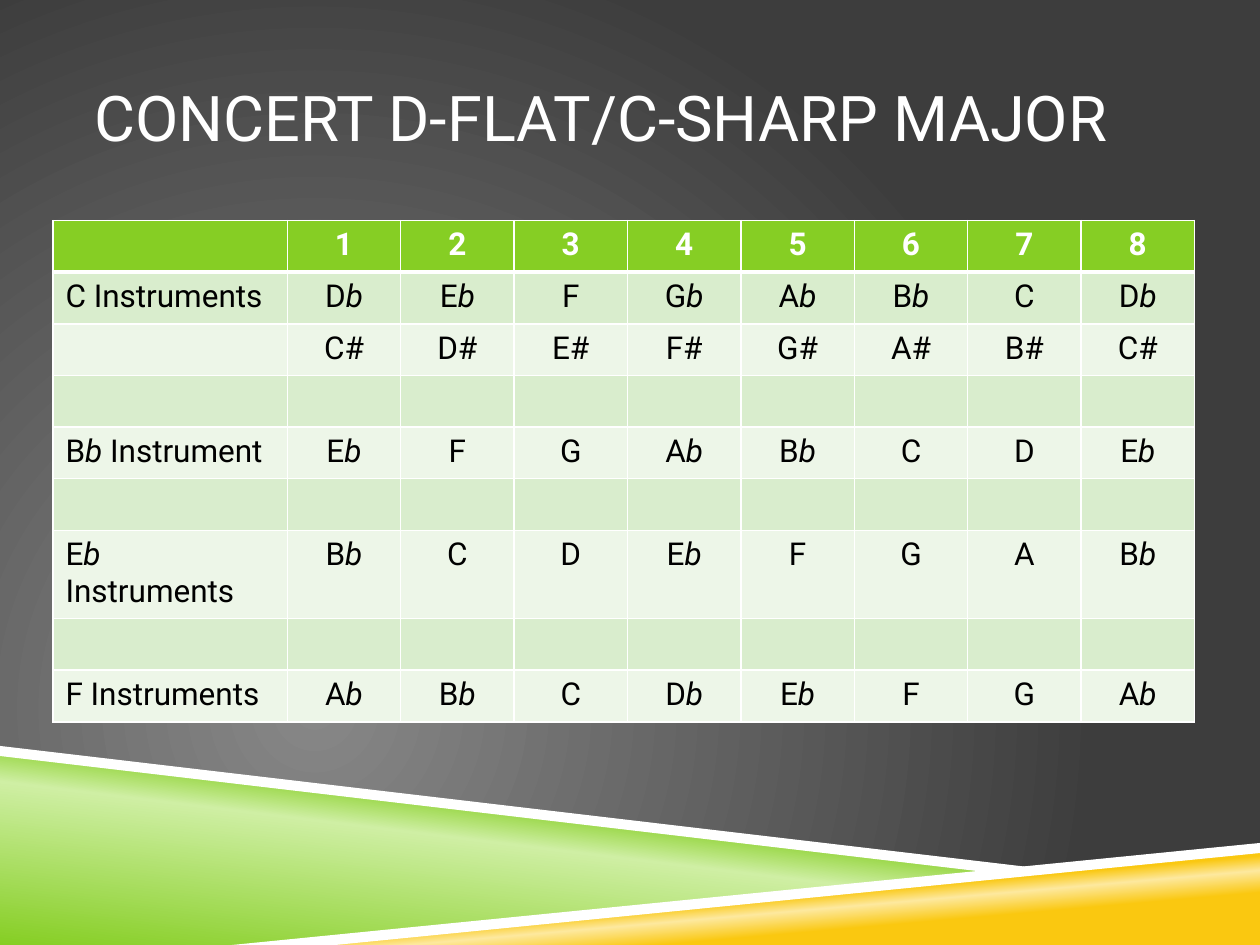
from lxml import etree
from pptx import Presentation
from pptx.dml.color import RGBColor
from pptx.enum.text import MSO_ANCHOR, PP_ALIGN
from pptx.oxml import parse_xml
from pptx.oxml.ns import nsdecls, qn
from pptx.util import Inches, Pt

COLORS = {
    "white": "FFFFFF", "black": "000000",
    "green": "86CE24", "light_green": "CFEFA4",
    "gold": "FAC810", "light_gold": "FDE99F",
    "gray": "878787", "dark_gray": "3D3D3D",
    "band": "D9EDCD", "pale_band": "EDF6E8",
}
FONT = "Roboto"
HEADER = ["", *"12345678"]
SCALES = [
    ("C Instruments", "Db Eb F Gb Ab Bb C Db"),
    ("", "C# D# E# F# G# A# B# C#"),
    ("", ""),
    ("Bb Instrument", "Eb F G Ab Bb C D Eb"),
    ("", ""),
    ("Eb Instruments", "Bb C D Eb F G A Bb"),
    ("", ""),
    ("F Instruments", "Ab Bb C Db Eb F G Ab"),
]


def rgb(name):
    return RGBColor.from_string(COLORS[name])


def linear(angle):
    return f'<a:lin ang="{angle * 60000}" scaled="0"/>'


class SlideBuilder:
    def __init__(self, slide):
        self.s = slide

    def gradient(self, fill, parent, stops, direction):
        """Fill parent with (percent, color) stops; direction is the a:lin or a:path XML."""
        fill.solid()
        stop_xml = "".join(
            f'<a:gs pos="{pos * 1000}"><a:srgbClr val="{COLORS[name]}"/></a:gs>'
            for pos, name in stops)
        grad = parse_xml(f'<a:gradFill {nsdecls("a")} rotWithShape="1">'
                         f'<a:gsLst>{stop_xml}</a:gsLst>{direction}</a:gradFill>')
        parent.replace(parent.find(qn("a:solidFill")), grad)

    def background(self, stops):
        fill = self.s.background.fill
        fill.solid()
        glow = ('<a:path path="circle">'
                '<a:fillToRect l="50000" t="100000" r="100000" b="50000"/></a:path>')
        self.gradient(fill, self.s._element.xpath(".//p:bgPr")[0], stops, glow)

    def polygon(self, points, color=None, stops=None, angle=0):
        points = [(Inches(x), Inches(y)) for x, y in points]
        builder = self.s.shapes.build_freeform(*points[0])
        builder.add_line_segments(points[1:], close=True)
        sp = builder.convert_to_shape()
        sp.shadow.inherit = False
        sp.line.fill.background()
        if stops:
            self.gradient(sp.fill, sp._element.spPr, stops, linear(angle))
        else:
            sp.fill.solid()
            sp.fill.fore_color.rgb = rgb(color)

    def run(self, p, text, size, color, bold=False, italic=False):
        r = p.add_run()
        r.text = text
        r.font.name, r.font.size = FONT, Pt(size)
        r.font.bold, r.font.italic = bold, italic
        r.font.color.rgb = rgb(color)

    def title(self, text, left, top, width, height):
        box = self.s.shapes.add_textbox(*map(Inches, (left, top, width, height)))
        tf = box.text_frame
        tf.word_wrap = True
        tf.vertical_anchor = MSO_ANCHOR.MIDDLE
        tf.margin_left = tf.margin_right = 0
        self.run(tf.paragraphs[0], text, 36, "white")

    def borders(self, cell, top, bottom):
        tc_pr = cell._tc.get_or_add_tcPr()
        for side, width in (("L", 1), ("R", 1), ("T", top), ("B", bottom)):
            ln = etree.SubElement(tc_pr, qn(f"a:ln{side}"), w=str(Pt(width)))
            fill = etree.SubElement(ln, qn("a:solidFill"))
            etree.SubElement(fill, qn("a:srgbClr"), val=COLORS["white"])

    def note(self, p, text, color, bold):
        """Write text with its flat sign, if any, in italics."""
        for part in text.partition("b"):
            if part:
                self.run(p, part, 18, color, bold, italic=part == "b")

    def table(self, rows, left, top, col_widths, row_height):
        frame = self.s.shapes.add_table(
            len(rows), len(col_widths), Inches(left), Inches(top),
            Inches(sum(col_widths)), Inches(row_height * len(rows)))
        table = frame.table
        for col, width in zip(table.columns, col_widths):
            col.width = Inches(width)
        for i, values in enumerate(rows):
            table.rows[i].height = Inches(row_height)
            header = i == 0
            fill = "green" if header else "band" if i % 2 else "pale_band"
            for j, text in enumerate(values):
                cell = table.cell(i, j)
                self.borders(cell, top=3 if i == 1 else 1, bottom=3 if header else 1)
                cell.fill.solid()
                cell.fill.fore_color.rgb = rgb(fill)
                p = cell.text_frame.paragraphs[0]
                if j:
                    p.alignment = PP_ALIGN.CENTER
                self.note(p, text, "white" if header else "black", bold=header)


def main():
    prs = Presentation()
    prs.slide_width, prs.slide_height = Inches(10), Inches(7.5)
    b = SlideBuilder(prs.slides.add_slide(prs.slide_layouts[6]))

    b.background([(0, "gray"), (100, "dark_gray")])
    b.polygon([(0, 5.97), (7.92, 6.92), (2, 7.5), (0, 7.5)], angle=277,
              stops=[(0, "green"), (52, "light_green"), (66, "green")])
    b.polygon([(1.98, 7.5), (10, 6.72), (10, 7.5)], angle=265,
              stops=[(28, "gold"), (40, "light_gold"), (48, "gold")])
    b.polygon([(0, 5.92), (0, 6), (7.9, 6.93), (8.32, 6.9)], "white")
    b.polygon([(10, 6.69), (1.84, 7.5), (2.66, 7.5), (10, 6.77)], "white")

    b.title("CONCERT D-FLAT/C-SHARP MAJOR", 0.75, 0.3, 8.5, 1.25)
    rows = [HEADER] + [[label, *(notes.split() or [""] * 8)] for label, notes in SCALES]
    b.table(rows, 0.42, 1.75, [1.86] + [0.9] * 8, 0.41)

    prs.save("out.pptx")


if __name__ == "__main__":
    main()
